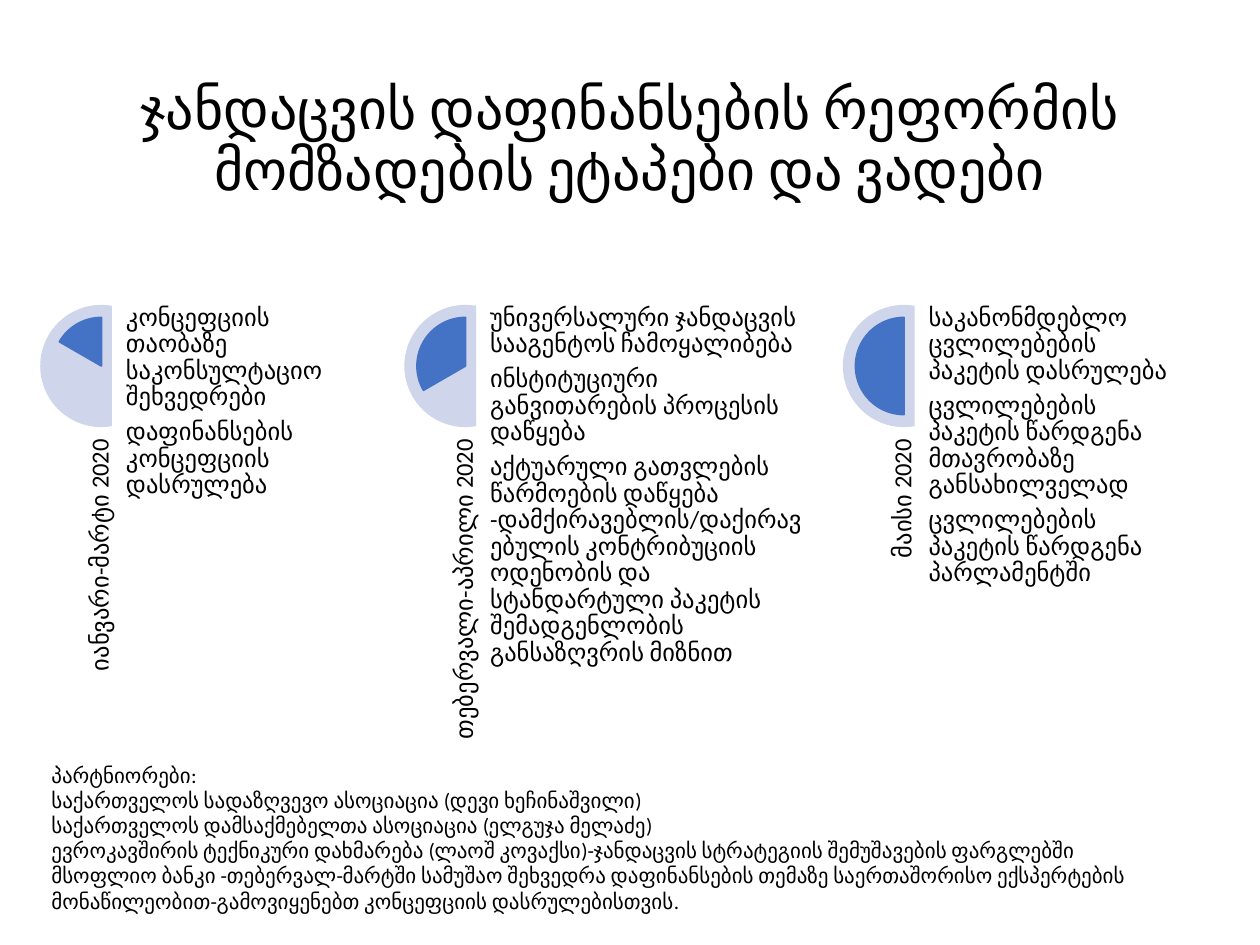
from dataclasses import dataclass

import pptx
import pptx.dml.color
import pptx.enum.shapes
import pptx.enum.text
import pptx.util

Inches = pptx.util.Inches
Pt = pptx.util.Pt
Align = pptx.enum.text.PP_ALIGN
Anchor = pptx.enum.text.MSO_ANCHOR
Shape = pptx.enum.shapes.MSO_SHAPE

FONT = "Calibri"
BLACK = "000000"
BLUE = "4472C4"
PALE_BLUE = "CFD5EA"
STAGE_TOP = 2.42
DISC_SIZE = 0.97
PIE_INSET = 0.1
PIE_END = 162
PIE_STEP = 36


@dataclass
class Stage:
    left: float
    list_width: float
    period: str
    tasks: list[str]


STAGES = [
    Stage(0.32, 1.94, "იანვარი-მარტი 2020", [
        "კონცეფციის თაობაზე საკონსულტაციო შეხვედრები",
        "დაფინანსების კონცეფციის დასრულება",
    ]),
    Stage(3.21, 2.53, "თებერვალი-აპრილი 2020", [
        "უნივერსალური ჯანდაცვის სააგენტოს ჩამოყალიბება",
        "ინსტიტუციური განვითარების პროცესის დაწყება",
        "აქტუარული გათვლების წარმოების დაწყება -დამქირავებლის/დაქირავებულის "
        "კონტრიბუციის ოდენობის და სტანდარტული პაკეტის შემადგენლობის "
        "განსაზღვრის მიზნით",
    ]),
    Stage(6.69, 1.94, "მაისი 2020", [
        "საკანონმდებლო ცვლილებების პაკეტის დასრულება",
        "ცვლილებების პაკეტის წარდგენა მთავრობაზე განსახილველად",
        "ცვლილებების პაკეტის წარდგენა პარლამენტში",
    ]),
]

PARTNERS = [
    "პარტნიორები:",
    "საქართველოს სადაზღვევო ასოციაცია (დევი ხეჩინაშვილი)",
    "საქართველოს დამსაქმებელთა ასოციაცია (ელგუჯა მელაძე)",
    "ევროკავშირის ტექნიკური დახმარება (ლაოშ კოვაქსი)-ჯანდაცვის სტრატეგიის "
    "შემუშავების ფარგლებში",
    "მსოფლიო ბანკი -თებერვალ-მარტში სამუშაო შეხვედრა დაფინანსების თემაზე "
    "საერთაშორისო ექსპერტების მონაწილეობით-გამოვიყენებთ კონცეფციის "
    "დასრულებისთვის.",
]


def color(value: str) -> pptx.dml.color.RGBColor:
    return pptx.dml.color.RGBColor.from_string(value)


def write(box, texts: list[str], *, size: float, align=Align.LEFT,
          anchor=Anchor.TOP, spacing: float = 1.0, after: float = 0,
          inset: bool = True) -> None:
    frame = box.text_frame
    frame.word_wrap = True
    frame.auto_size = pptx.enum.text.MSO_AUTO_SIZE.NONE
    frame.vertical_anchor = anchor
    if not inset:
        frame.margin_left = frame.margin_right = 0
        frame.margin_top = frame.margin_bottom = 0
    for index, text in enumerate(texts):
        para = frame.add_paragraph() if index else frame.paragraphs[0]
        para.alignment = align
        para.line_spacing = spacing
        para.space_after = Pt(after)
        span = para.add_run()
        span.text = text
        span.font.name = FONT
        span.font.size = Pt(size)
        span.font.color.rgb = color(BLACK)


def add_text(page, left: float, top: float, width: float, height: float,
             texts: list[str], **style):
    box = page.shapes.add_textbox(
        Inches(left), Inches(top), Inches(width), Inches(height))
    write(box, texts, **style)
    return box


def add_sector(page, kind, left: float, top: float, size: float, fill: str,
               start: float, end: float):
    sector = page.shapes.add_shape(
        kind, Inches(left), Inches(top), Inches(size), Inches(size))
    sector.shadow.inherit = False
    sector.adjustments[0] = start
    sector.adjustments[1] = end
    sector.fill.solid()
    sector.fill.fore_color.rgb = color(fill)
    sector.line.fill.background()
    return sector


def add_stage(page, stage: Stage, number: int) -> None:
    add_sector(page, Shape.CHORD, stage.left, STAGE_TOP, DISC_SIZE,
               PALE_BLUE, 48, 168)
    pie = add_sector(page, Shape.PIE, stage.left + PIE_INSET,
                     STAGE_TOP + PIE_INSET, DISC_SIZE - 2 * PIE_INSET,
                     BLUE, PIE_END - PIE_STEP * number, PIE_END)
    pie.line.color.rgb = color(BLUE)
    pie.line.width = Pt(1)
    style = dict(size=14, spacing=0.9, after=5, inset=False)
    label = add_text(page, stage.left - 1.11, 4.6, 2.81, 0.58, [stage.period],
                     align=Align.RIGHT, anchor=Anchor.BOTTOM, **style)
    label.rotation = 270
    add_text(page, stage.left + 0.68, STAGE_TOP, stage.list_width, 3.87,
             stage.tasks, **style)


def main() -> None:
    deck = pptx.Presentation()
    deck.slide_width = Inches(10)
    deck.slide_height = Inches(7.5)
    page = deck.slides.add_slide(deck.slide_layouts.get_by_name("Title Only"))
    title = page.shapes.title
    title.left, title.top = Inches(0.69), Inches(0.4)
    title.width, title.height = Inches(8.62), Inches(1.45)
    write(title, ["ჯანდაცვის დაფინანსების რეფორმის მომზადების ეტაპები და ვადები"],
          size=32, align=Align.CENTER, anchor=Anchor.MIDDLE, spacing=0.9)
    for number, stage in enumerate(STAGES, start=1):
        add_stage(page, stage, number)
    add_text(page, 0.31, 6, 9.3, 1.31, PARTNERS, size=12)
    deck.save("out.pptx")


if __name__ == "__main__":
    main()
